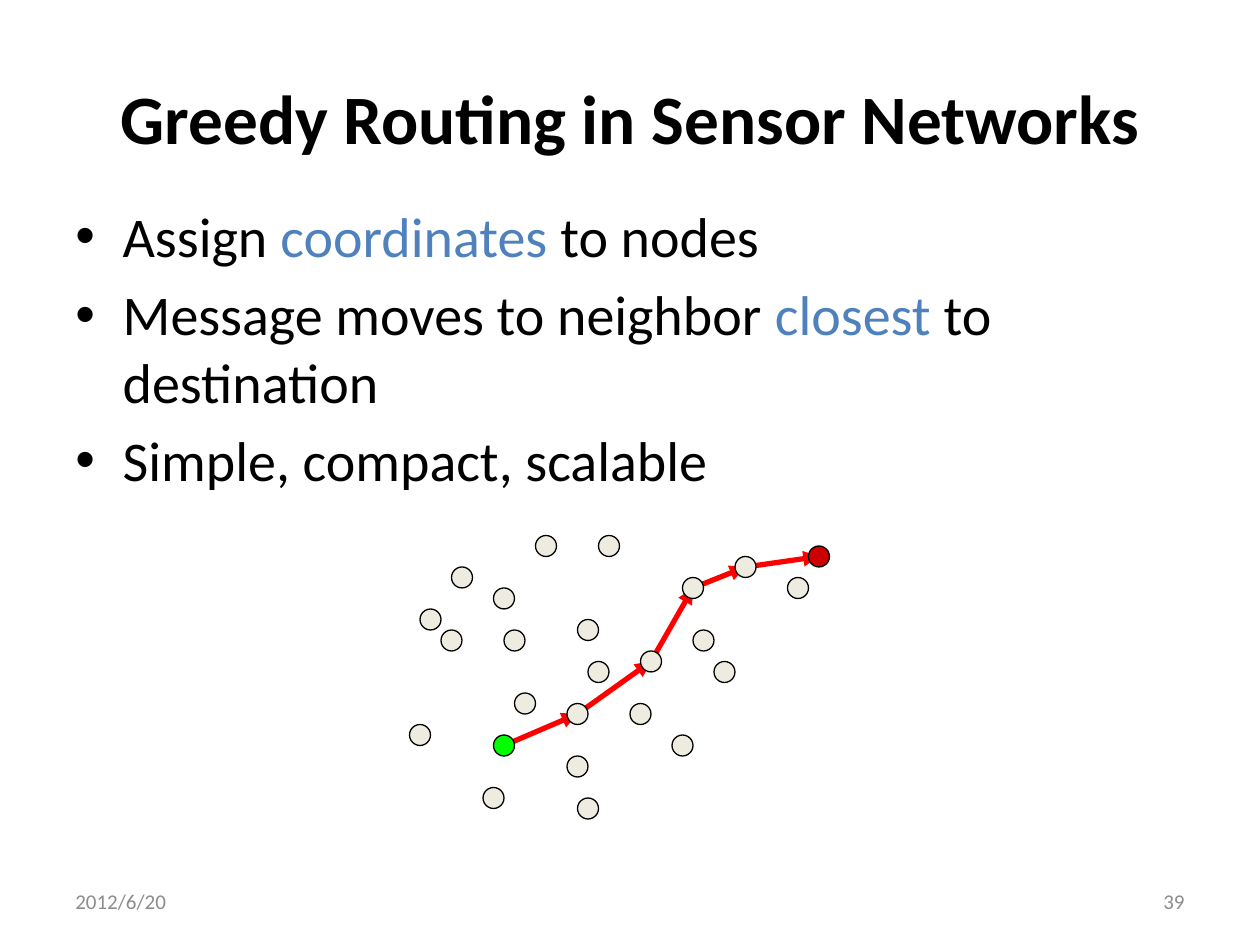
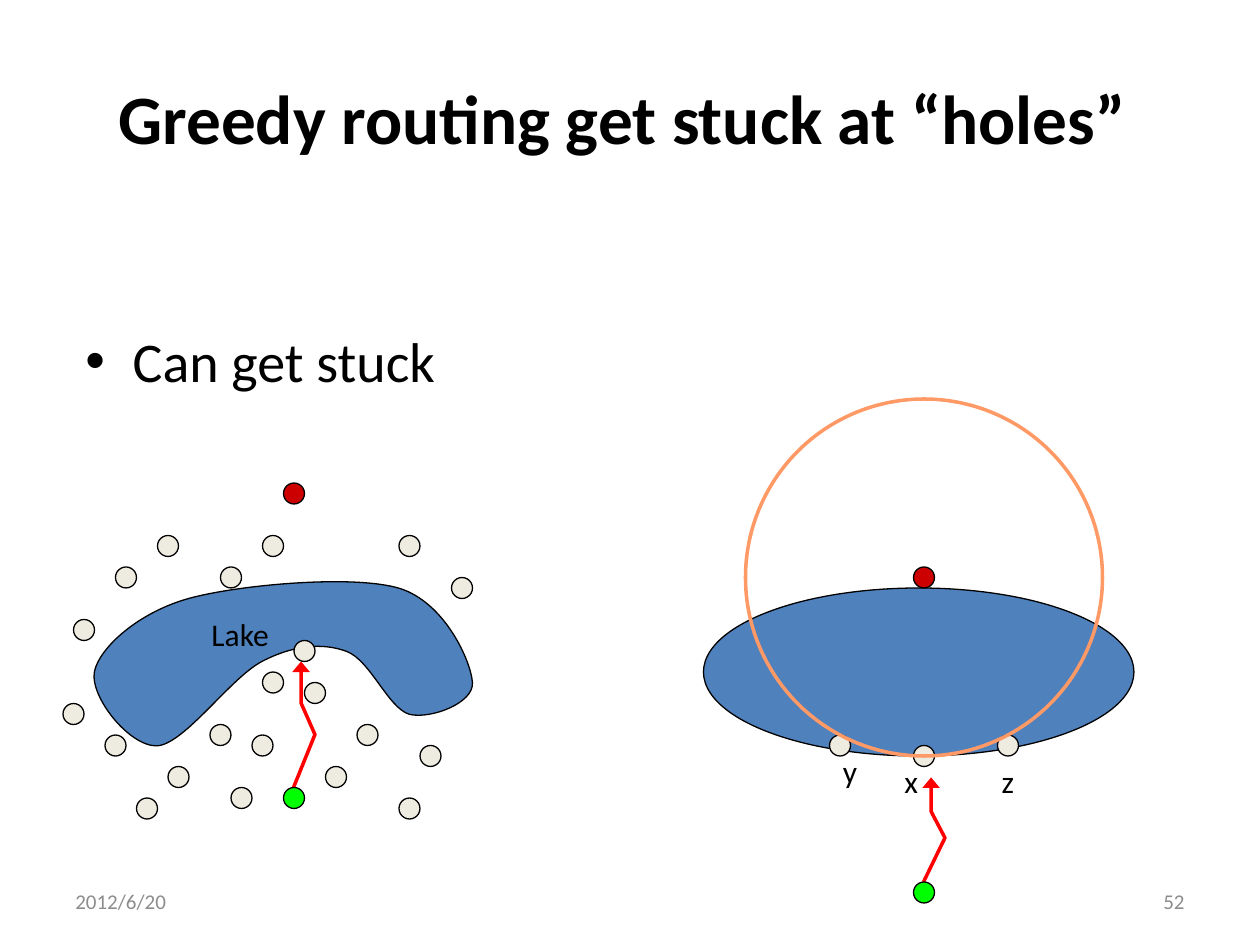
import dataclasses

import lxml.etree
import pptx
import pptx.dml.color
import pptx.enum.shapes
import pptx.enum.text
import pptx.oxml.ns
import pptx.util

Inches = pptx.util.Inches
Pt = pptx.util.Pt
RGB = pptx.dml.color.RGBColor.from_string
qn = pptx.oxml.ns.qn
ALIGN = pptx.enum.text.PP_ALIGN
ANCHOR = pptx.enum.text.MSO_ANCHOR


@dataclasses.dataclass
class Theme:
    font: str = "Calibri"
    ink: str = "000000"
    blue: str = "4F81BD"
    grey: str = "8C8C8C"
    node: str = "EEECE1"
    source: str = "00FF00"
    target: str = "CC0000"
    route: str = "FF0000"
    ring: str = "FF9966"
    title: float = 39.6
    body: float = 32
    label: float = 18
    footer: float = 12


theme = Theme()
GRID = 1 / 12


def add_text(s, text, left, top, width, height, size, color=theme.ink, bold=False,
             align=ALIGN.LEFT, anchor=ANCHOR.TOP, wrap=True, bullet=False):
    tf = s.shapes.add_textbox(Inches(left), Inches(top), Inches(width), Inches(height)).text_frame
    tf.word_wrap = wrap
    tf.vertical_anchor = anchor
    for i, line in enumerate(text.split("\n")):
        p = tf.add_paragraph() if i else tf.paragraphs[0]
        p.alignment = align
        if bullet:
            p.space_before = Pt(0.2 * size if i else 0)
            pPr = p._p.get_or_add_pPr()
            pPr.set("marL", str(Pt(27)))
            pPr.set("indent", str(Pt(-27)))
            lxml.etree.SubElement(pPr, qn("a:buFont"), typeface="Arial")
            lxml.etree.SubElement(pPr, qn("a:buChar"), char="•")
        for j, part in enumerate(line.split("*")):
            r = p.add_run()
            r.text = part
            r.font.name = theme.font
            r.font.size = Pt(size)
            r.font.bold = bold
            r.font.color.rgb = RGB(theme.blue if j % 2 else color)


def add_oval(s, x, y, fill=theme.node, width=2, height=2, line=theme.ink, weight=0.75):
    sp = s.shapes.add_shape(
        pptx.enum.shapes.MSO_SHAPE.OVAL,
        Inches((x - width / 2) * GRID), Inches((y - height / 2) * GRID),
        Inches(width * GRID), Inches(height * GRID))
    sp.shadow.inherit = False
    if fill:
        sp.fill.solid()
        sp.fill.fore_color.rgb = RGB(fill)
    else:
        sp.fill.background()
    sp.line.color.rgb = RGB(line)
    sp.line.width = Pt(weight)


prs = pptx.Presentation()
prs.slide_width, prs.slide_height = Inches(10), Inches(7.5)

pages = [
    ("Greedy Routing in Sensor Networks", "39", 0.5, 1.55,
     "Assign *coordinates* to nodes\n"
     "Message moves to neighbor *closest* to destination\n"
     "Simple, compact, scalable"),
    ("Greedy routing get stuck at “holes” ", "52", 0.58, 2.54, "Can get stuck"),
]
slides = []
for title, number, left, top, body in pages:
    s = prs.slides.add_slide(prs.slide_layouts[6])
    add_text(s, title, 0.5, 0.3, 9, 1.25, theme.title, bold=True,
             align=ALIGN.CENTER, anchor=ANCHOR.MIDDLE)
    add_text(s, body, left, top, 9, 6.5 - top, theme.body, bullet=True)
    add_text(s, "2012/6/20", 0.5, 6.95, 2.33, 0.4, theme.footer, theme.grey, anchor=ANCHOR.MIDDLE)
    add_text(s, number, 7.17, 6.95, 2.33, 0.4, theme.footer, theme.grey,
             align=ALIGN.RIGHT, anchor=ANCHOR.MIDDLE)
    slides.append(s)
greedy, stuck = slides
arrows = []

idle_nodes = [
    (44, 55), (40, 70), (56, 60), (49, 61), (61, 68), (47, 76), (55, 73),
    (65, 71), (50, 67), (41, 59), (43, 61), (48, 57), (52, 52), (57, 64),
    (58, 52), (56, 77), (67, 61), (76, 56), (69, 64),
]
hops = [(48, 71), (55, 68), (62, 63), (66, 56), (71, 54), (78, 53)]
for x, y in idle_nodes:
    add_oval(greedy, x, y)
for start, end in zip(hops, hops[1:]):
    hop = greedy.shapes.add_connector(
        pptx.enum.shapes.MSO_CONNECTOR.STRAIGHT,
        *[Inches(v * GRID) for v in start + end])
    hop.line.color.rgb = RGB(theme.route)
    hop.line.width = Pt(3)
    lxml.etree.SubElement(hop._element.spPr, qn("a:effectLst"))
    arrows.append((hop, "med"))
hop_fills = [theme.source] + [theme.node] * 4 + [theme.target]
for (x, y), fill in zip(hops, hop_fills):
    add_oval(greedy, x, y, fill)

lake = [
    (1.5, 4.75),
    (1.1, 4.86), (0.79, 5.14), (0.75, 5.33),
    (0.71, 5.53), (1.03, 5.93), (1.25, 5.92),
    (1.47, 5.9), (1.83, 5.38), (2.08, 5.25),
    (2.33, 5.12), (2.56, 5.1), (2.75, 5.17),
    (2.94, 5.24), (3.08, 5.62), (3.25, 5.67),
    (3.42, 5.71), (3.76, 5.58), (3.75, 5.42),
    (3.74, 5.25), (3.53, 4.78), (3.17, 4.67),
    (2.81, 4.56), (1.9, 4.64), (1.5, 4.75),
]
left_route = [(2.33, 6.25), (2.5, 5.83), (2.39, 5.58), (2.39, 5.25)]
right_route = [(7.33, 7), (7.5, 6.65), (7.39, 6.44), (7.39, 6.17)]
for points, is_lake in [(lake, True), (left_route, False), (right_route, False)]:
    points = [(Inches(x), Inches(y)) for x, y in points]
    builder = stuck.shapes.build_freeform(*points[0])
    builder.add_line_segments(points[1:], close=is_lake)
    sp = builder.convert_to_shape()
    sp.shadow.inherit = False
    sp.line.color.rgb = RGB(theme.ink if is_lake else theme.route)
    sp.line.width = Pt(0.75 if is_lake else 2)
    if is_lake:
        sp.fill.solid()
        sp.fill.fore_color.rgb = RGB(theme.blue)
        segments = list(sp._element.iter(qn("a:lnTo")))
        for i in range(0, len(segments), 3):
            curve = lxml.etree.Element(qn("a:cubicBezTo"))
            segments[i].addprevious(curve)
            for segment in segments[i:i + 3]:
                curve.append(segment[0])
                segment.getparent().remove(segment)
    else:
        sp.fill.background()
        arrows.append((sp, "lg"))

add_oval(stuck, 87.5, 64, theme.blue, width=41, height=16)
shore_nodes = [
    (16, 52), (12, 55), (26, 52), (25, 71), (39, 52), (29, 62), (26, 65),
    (30, 66), (35, 70), (32, 74), (41, 72), (8, 60), (44, 56), (7, 68),
    (17, 74), (11, 71), (21, 70), (14, 77), (23, 76), (22, 55), (39, 77),
    (80, 71), (88, 72), (96, 71),
]
for x, y in shore_nodes:
    add_oval(stuck, x, y)
add_oval(stuck, 88, 55, None, width=34, height=34, line=theme.ring, weight=2)
for x, source_y, target_y in [(28, 76, 47), (88, 85, 55)]:
    add_oval(stuck, x, source_y, theme.source)
    add_oval(stuck, x, target_y, theme.target)

labels = [("Lake", 1.58, 4.83, 0.72), ("y", 6.59, 5.92, 0.32),
          ("x", 7.08, 6, 0.32), ("z", 7.85, 6, 0.31)]
for text, left, top, width in labels:
    add_text(stuck, text, left, top, width, 0.4, theme.label, wrap=False)

for arrow, head_width in arrows:
    lxml.etree.SubElement(arrow.line._get_or_add_ln(), qn("a:tailEnd"),
                          type="triangle", w=head_width)

prs.save("out.pptx")
